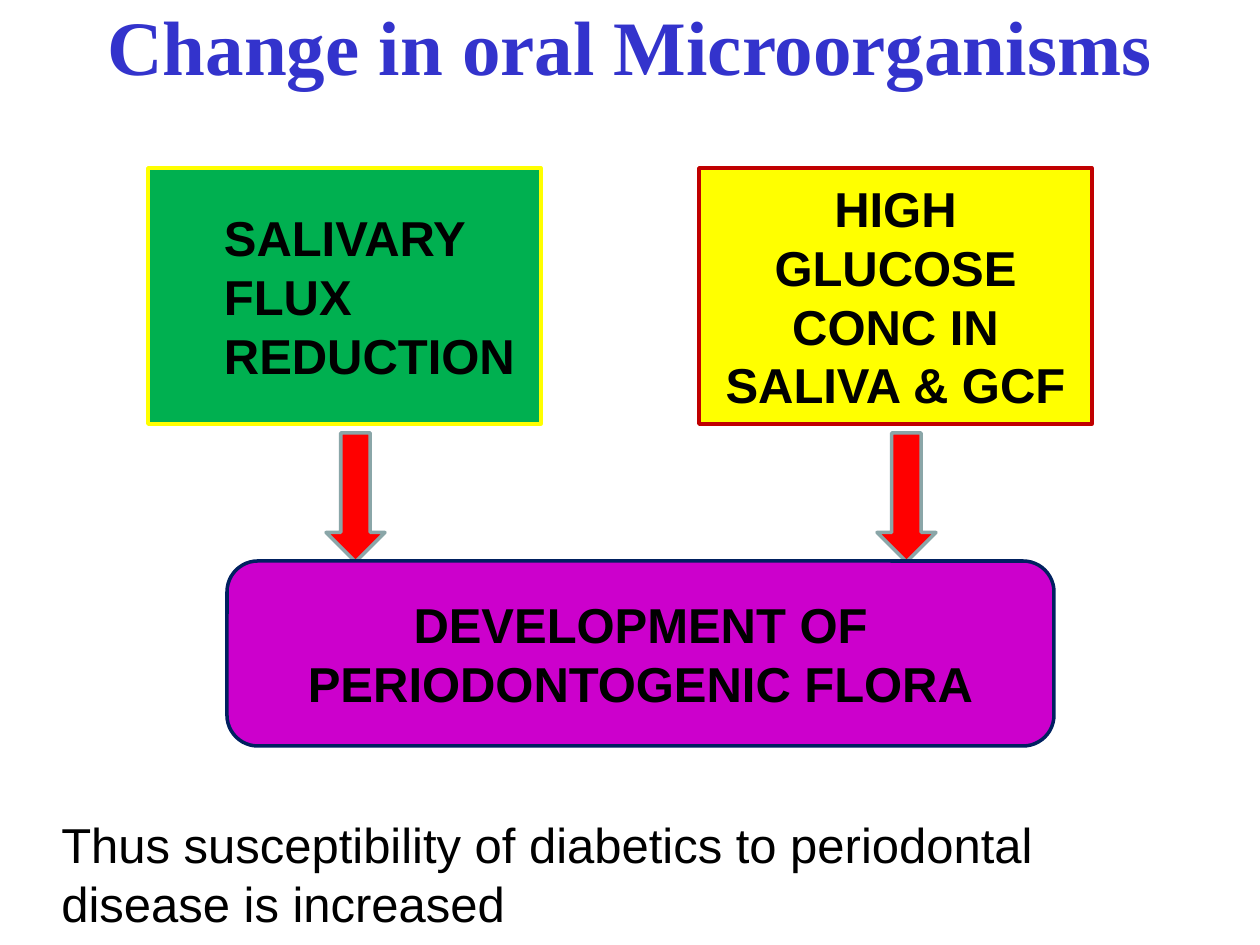
from pptx import Presentation
from pptx import util as u
from pptx.dml import color
from pptx.enum import shapes, text

SCALE = 914400 / 126
SHAPE = shapes.MSO_SHAPE
ALIGN = text.PP_ALIGN
ANCHOR = text.MSO_ANCHOR


def emu(px):
    """Turn px into EMU."""
    return u.Emu(round(px * SCALE))


def rgb(hex_value):
    """Turn a hex string into a colour."""
    return color.RGBColor.from_string(hex_value)


def apply(target, values):
    """Set attributes from a dict of format values."""
    for name, value in values.items():
        setattr(target, name, value)


def write(holder, wording, align=ALIGN.CENTER, ink="000000", frame=None, **font):
    """Write one paragraph into a shape or text box."""
    body = holder.text_frame
    apply(body, {"word_wrap": True, "vertical_anchor": ANCHOR.MIDDLE, **(frame or {})})
    paragraph = body.paragraphs[0]
    paragraph.alignment = align
    run = paragraph.add_run()
    run.text = wording
    apply(run.font, {"name": "Arial", "size": u.Pt(28), "bold": True, **font})
    run.font.color.rgb = rgb(ink)


def block(slide, kind, box, fill, outline):
    """Add a filled, outlined shape."""
    shape = slide.shapes.add_shape(kind, *map(emu, box))
    shape.shadow.inherit = False
    shape.fill.solid()
    shape.fill.fore_color.rgb = rgb(fill)
    shape.line.color.rgb = rgb(outline)
    shape.line.width = u.Pt(2)
    return shape


def title(slide, box):
    """Add the heading."""
    heading = slide.shapes.add_textbox(*map(emu, box))
    write(heading, "Change in oral Microorganisms", ink="3333CC",
          frame={"margin_top": 0, "margin_bottom": 0},
          name="Times New Roman", size=u.Pt(44))


def cause(slide, box, wording, fill, outline, **layout):
    """Add a cause with the arrow that leads down from it."""
    left, top, width, height = box
    write(block(slide, SHAPE.RECTANGLE, box, fill, outline), wording, **layout)
    arrow = (left + 178, top + height + 9, 59, 129)
    block(slide, SHAPE.DOWN_ARROW, arrow, "FF0000", "8AA6A8")


def effect(slide, box):
    """Add the shared outcome of both causes."""
    outcome = block(slide, SHAPE.ROUNDED_RECTANGLE, box, "CC00CC", "002060")
    write(outcome, "DEVELOPMENT OF PERIODONTOGENIC FLORA")


def conclusion(slide, box):
    """Add the closing sentence."""
    closing = slide.shapes.add_textbox(*map(emu, box))
    write(closing, "Thus susceptibility of diabetics to periodontal disease is increased",
          align=ALIGN.LEFT, frame={"vertical_anchor": ANCHOR.TOP}, bold=False)


def main():
    """Build and save the slide."""
    deck = Presentation()
    apply(deck, {"slide_width": emu(1260), "slide_height": emu(945)})
    slide = deck.slides.add_slide(deck.slide_layouts[6])
    title(slide, (63, 0, 1134, 89))
    cause(slide, (148, 168, 393, 256), "SALIVARY FLUX REDUCTION", "00B050", "FFFF00",
          align=ALIGN.LEFT, frame={"margin_left": emu(76)})
    cause(slide, (699, 168, 393, 256), "HIGH GLUCOSE CONC IN SALIVA & GCF", "FFFF00", "C00000")
    effect(slide, (227, 561, 827, 185))
    conclusion(slide, (49, 808, 1162, 131))
    deck.save("out.pptx")


if __name__ == "__main__":
    main()
